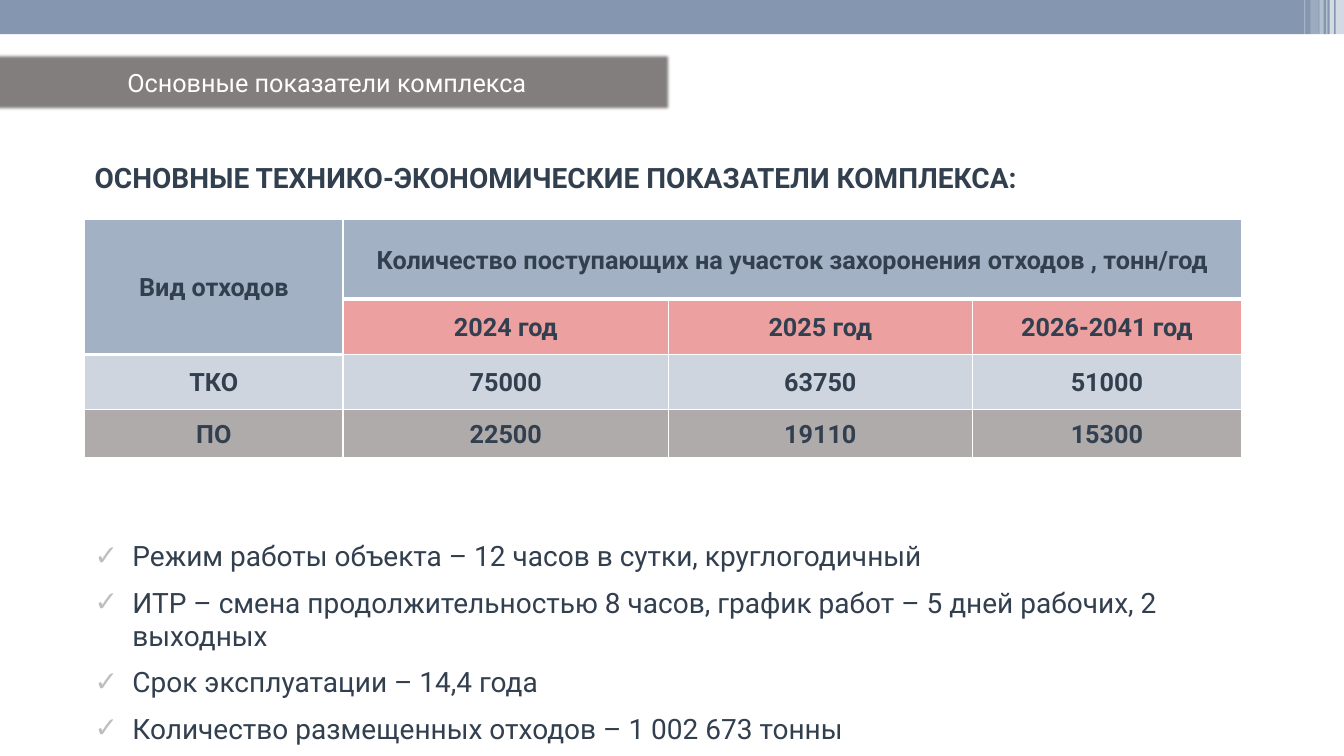
from dataclasses import dataclass
from itertools import product

from lxml import etree
from pptx import Presentation
from pptx.dml.color import RGBColor
from pptx.enum import shapes, text
from pptx.oxml import ns
from pptx.util import Pt


@dataclass(frozen=True)
class Theme:
    font: str = "Roboto"
    ink: str = "323F4F"
    white: str = "FFFFFF"
    band: str = "8496B0"
    banner: str = "767171"
    header: str = "A2B1C4"
    years: str = "EDA0A0"
    odd_row: str = "CED5DF"
    even_row: str = "AFABAB"
    tick: str = "BEBEBE"
    body_size: int = 20
    label_size: int = 18


THEME = Theme()
CENTER = text.PP_ALIGN.CENTER
MIDDLE = text.MSO_ANCHOR.MIDDLE


def add_xml(parent, tag, **attrs):
    return etree.SubElement(parent, ns.qn(tag), {k: str(v) for k, v in attrs.items()})


def write(p, words, size=THEME.body_size, color=THEME.ink, bold=False,
          align=None, line=None, before=0, after=0):
    p.alignment = align
    p.line_spacing = line
    p.space_before, p.space_after = Pt(before), Pt(after)
    r = p.add_run()
    r.text = words
    r.font.name, r.font.size, r.font.bold = THEME.font, Pt(size), bold
    r.font.color.rgb = RGBColor.from_string(color)


def add_rect(s, x, y, w, h, color, opacity=100):
    sp = s.shapes.add_shape(shapes.MSO_SHAPE.RECTANGLE, Pt(x), Pt(y), Pt(w), Pt(h))
    sp.shadow.inherit = False
    sp.line.fill.background()
    sp.fill.solid()
    sp.fill.fore_color.rgb = RGBColor.from_string(color)
    if opacity < 100:
        clr = sp._element.spPr.find(".//" + ns.qn("a:srgbClr"))
        add_xml(clr, "a:alpha", val=opacity * 1000)
    return sp


def add_textbox(s, x, y, w, h):
    tf = s.shapes.add_textbox(Pt(x), Pt(y), Pt(w), Pt(h)).text_frame
    tf.word_wrap = True
    return tf


def top_band(s, x, y, w, h):
    add_rect(s, x, y, w, h, THEME.band)
    strips = [(6, 6, 65), (10.25, 3, 65), (12.5, 0.75, 60),
              (17.5, 3, 40), (24, 6, 20), (28.5, 0.75, 30)]
    for from_right, width, opacity in strips:
        add_rect(s, x + w - from_right, y, width, 2 * h, THEME.white, opacity)


def banner(s, x, y, w, h):
    sp = add_rect(s, x, y, w, h, THEME.banner, 90)
    add_xml(sp._element.spPr.find(ns.qn("a:effectLst")), "a:softEdge", rad=Pt(2.5))
    sp.text_frame.vertical_anchor = MIDDLE
    write(sp.text_frame.paragraphs[0], "Основные показатели комплекса",
          size=THEME.label_size, color=THEME.white, align=CENTER)


def heading(s, x, y, w, h):
    tf = add_textbox(s, x, y, w, h)
    write(tf.paragraphs[0], "ОСНОВНЫЕ ТЕХНИКО-ЭКОНОМИЧЕСКИЕ ПОКАЗАТЕЛИ КОМПЛЕКСА:",
          bold=True)


def set_borders(cell, top, bottom):
    tcPr = cell._tc.get_or_add_tcPr()
    sides = [("a:lnL", 1), ("a:lnR", 1), ("a:lnT", top), ("a:lnB", bottom)]
    for i, (tag, width) in enumerate(sides):
        ln = add_xml(tcPr, tag, w=Pt(width))
        add_xml(add_xml(ln, "a:solidFill"), "a:srgbClr", val=THEME.white)
        tcPr.insert(i, ln)


def waste_table(s, x, y, w, h):
    rows = [
        ["Вид отходов", "Количество поступающих на участок захоронения отходов , тонн/год", "", ""],
        ["", "2024 год", "2025 год", "2026-2041 год"],
        ["ТКО", "75000", "63750", "51000"],
        ["ПО", "22500", "19110", "15300"],
    ]
    fills = [THEME.header, THEME.years, THEME.odd_row, THEME.even_row]
    col_shares = [184.5, 232.5, 216.75, 192.5]
    row_shares = [56.5, 39.5, 39.25, 34.25]
    table = s.shapes.add_table(4, 4, Pt(x), Pt(y), Pt(w), Pt(h)).table
    table.first_row = table.horz_banding = False
    for col, share in zip(table.columns, col_shares):
        col.width = Pt(w * share / sum(col_shares))
    for row, share in zip(table.rows, row_shares):
        row.height = Pt(h * share / sum(row_shares))
    table.cell(0, 0).merge(table.cell(1, 0))
    table.cell(0, 1).merge(table.cell(0, 3))
    for r, c in product(range(4), range(4)):
        cell = table.cell(r, c)
        header_end = 1 if c == 0 else 0
        cell.fill.solid()
        cell.fill.fore_color.rgb = RGBColor.from_string(
            THEME.header if r <= header_end else fills[r])
        set_borders(cell, top=3 if r == header_end + 1 else 1,
                    bottom=3 if r <= header_end else 1)
        cell.vertical_anchor = MIDDLE
        cell.margin_left = cell.margin_right = Pt(5)
        cell.margin_top = cell.margin_bottom = 0
        if rows[r][c]:
            write(cell.text_frame.paragraphs[0], rows[r][c], size=THEME.label_size,
                  bold=True, align=CENTER, line=1.07)


def add_tick(p, indent=27):
    pPr = p._p.get_or_add_pPr()
    pPr.set("marL", str(Pt(indent)))
    pPr.set("indent", str(-Pt(indent)))
    add_xml(add_xml(pPr, "a:buClr"), "a:srgbClr", val=THEME.tick)
    add_xml(pPr, "a:buFont", typeface=THEME.font)
    add_xml(pPr, "a:buChar", char="✓")


def facts(s, x, y, w, h):
    items = [
        "Режим работы объекта – 12 часов в сутки, круглогодичный",
        "ИТР – смена продолжительностью 8 часов, график работ – 5 дней рабочих, 2 выходных",
        "Срок эксплуатации – 14,4 года",
        "Количество размещенных отходов – 1 002 673 тонны",
    ]
    tf = add_textbox(s, x, y, w, h)
    for i, item in enumerate(items):
        p = tf.paragraphs[0] if i == 0 else tf.add_paragraph()
        write(p, item, before=3, after=6)
        add_tick(p)


def main():
    prs = Presentation()
    prs.slide_width, prs.slide_height = Pt(960), Pt(540)
    s = prs.slides.add_slide(prs.slide_layouts[6])
    top_band(s, 0, 0, 960, 24.5)
    banner(s, -13, 37.5, 493, 42.5)
    heading(s, 60.5, 110.8, 873, 31)
    waste_table(s, 60.5, 157, 826.5, 169.8)
    facts(s, 60.5, 381.3, 862, 156)
    prs.save("out.pptx")


if __name__ == "__main__":
    main()
